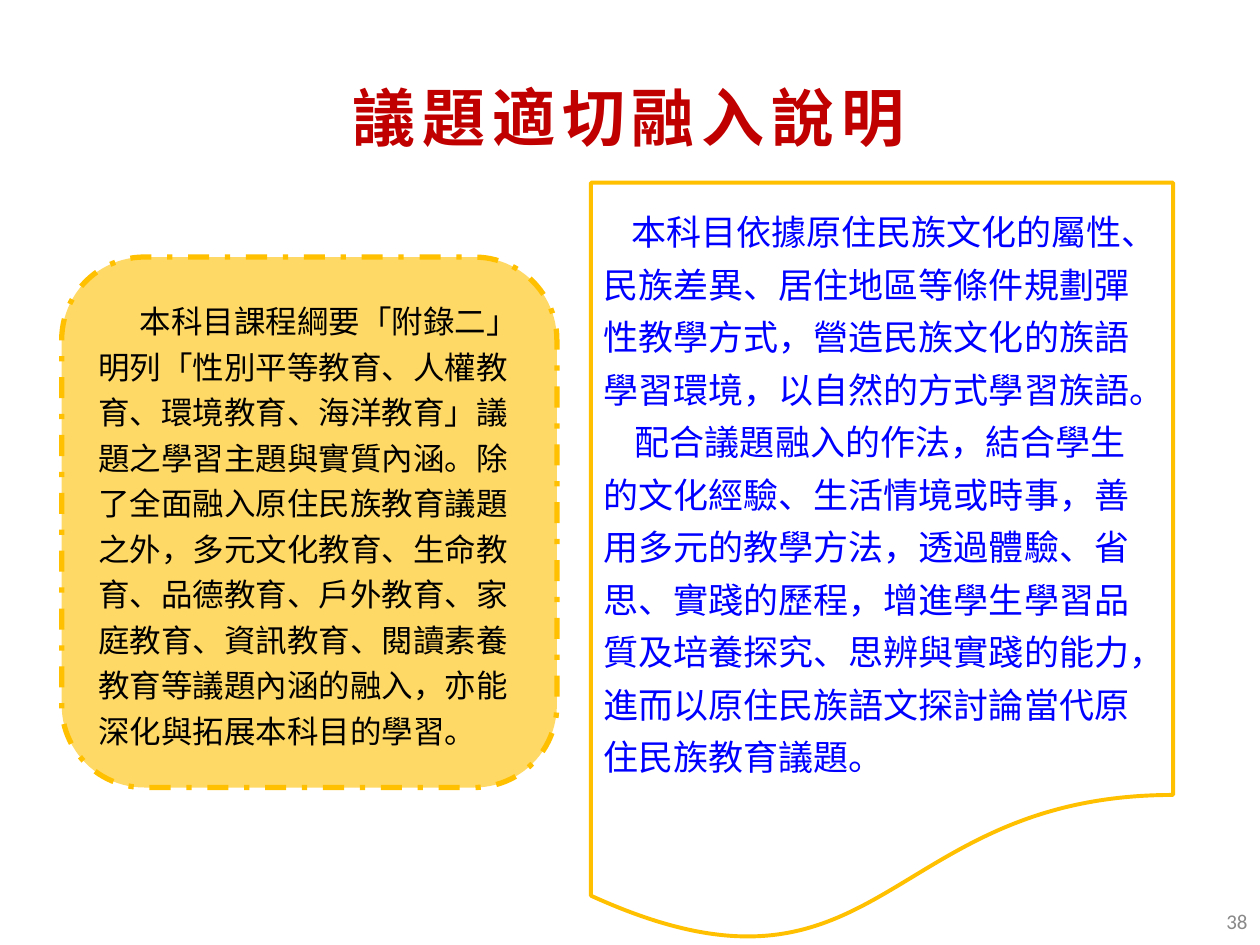
"""Build the slide on weaving issues into the indigenous language curriculum."""
import pptx
import pptx.dml.color
import pptx.enum.dml
import pptx.enum.shapes
import pptx.enum.text
import pptx.oxml.ns
import pptx.util
from lxml import etree

Inches = pptx.util.Inches
Pt = pptx.util.Pt
Shape = pptx.enum.shapes.MSO_SHAPE
Align = pptx.enum.text.PP_ALIGN
CJK = "Noto Sans CJK SC"

TITLE = "議題適切融入說明"
PAGE_NUMBER = "38"
ISSUES = [
    (0.33, "本科目課程綱要「附錄二」明列「性別平等教育、人權教育、環境教育、海洋教育」議題之學習主題與實質內涵。"
     "除了全面融入原住民族教育議題之外，多元文化教育、生命教育、品德教育、戶外教育、家庭教育、資訊教育、"
     "閱讀素養教育等議題內涵的融入，亦能深化與拓展本科目的學習。"),
]
METHODS = [
    (0.22, "本科目依據原住民族文化的屬性、民族差異、居住地區等條件規劃彈性教學方式，"
     "營造民族文化的族語學習環境，以自然的方式學習族語。"),
    (0.25, "配合議題融入的作法，結合學生的文化經驗、生活情境或時事，善用多元的教學方法，"
     "透過體驗、省思、實踐的歷程，增進學生學習品質及培養探究、思辨與實踐的能力，"
     "進而以原住民族語文探討論當代原住民族教育議題。"),
]
PANELS = [
    (Shape.FLOWCHART_ALTERNATE_PROCESS, (0.49, 2.04, 3.93, 4.21), "FFD966", 3,
     pptx.enum.dml.MSO_LINE.DASH_DOT, ISSUES, 18, 26, "000000"),
    (Shape.FLOWCHART_DOCUMENT, (4.69, 1.45, 4.62, 6.06), "FFFFFF", 2.25,
     pptx.enum.dml.MSO_LINE.SOLID, METHODS, 20, 30, "0000FF"),
]


def color(value):
    return pptx.dml.color.RGBColor.from_string(value)


def write(shape, paragraphs, size, ink, align, font=CJK, leading=None, bold=False, spacing=0):
    frame = shape.text_frame
    frame.word_wrap = True
    frame.vertical_anchor = pptx.enum.text.MSO_ANCHOR.MIDDLE
    for index, (indent, text) in enumerate(paragraphs):
        para = frame.add_paragraph() if index else frame.paragraphs[0]
        para.text = text
        para.alignment = align
        if leading:
            para.line_spacing = Pt(leading)
        para.font.size = Pt(size)
        para.font.bold = bold
        para.font.name = font
        para.font.color.rgb = color(ink)
        settings = para._p.get_or_add_pPr()
        settings.set("indent", str(Inches(indent)))
        defaults = settings.get_or_add_defRPr()
        defaults.set("spc", str(spacing * 100))
        etree.SubElement(defaults, pptx.oxml.ns.qn("a:ea"), typeface=font)


def add_label(page, place, text, *style, **options):
    box = page.shapes.add_textbox(*map(Inches, place))
    write(box, [(0, text)], *style, **options)


def add_panel(page, kind, place, fill, width, dash, paragraphs, size, leading, ink):
    panel = page.shapes.add_shape(kind, *map(Inches, place))
    panel.shadow.inherit = False
    panel.fill.solid()
    panel.fill.fore_color.rgb = color(fill)
    panel.line.color.rgb = color("FFC000")
    panel.line.width = Pt(width)
    panel.line.dash_style = dash
    write(panel, paragraphs, size, ink, Align.LEFT, leading=leading)


def main():
    deck = pptx.Presentation()
    deck.slide_width, deck.slide_height = Inches(10), Inches(7.5)
    page = deck.slides.add_slide(deck.slide_layouts[6])
    add_label(page, (0.68, 0.39, 8.62, 1.07), TITLE, 36, "C00000", Align.CENTER,
              bold=True, spacing=4)
    add_label(page, (7.75, 7.11, 2.25, 0.4), PAGE_NUMBER, 12, "898989", Align.RIGHT,
              font="Calibri")
    for panel in PANELS:
        add_panel(page, *panel)
    deck.save("out.pptx")


if __name__ == "__main__":
    main()
